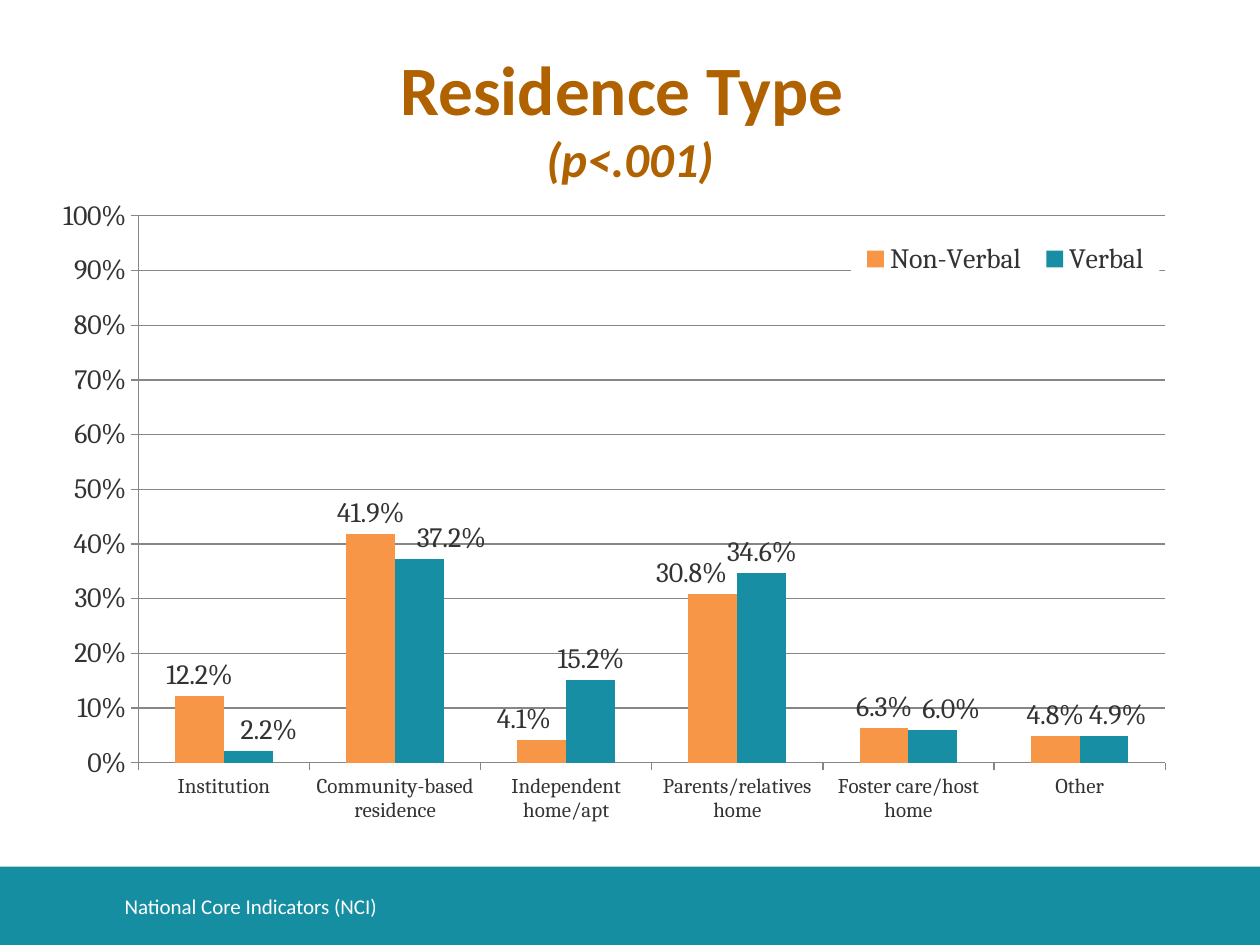
from lxml import etree
from pptx import Presentation
from pptx.chart.data import CategoryChartData
from pptx.dml.color import RGBColor
from pptx.enum.chart import XL_CHART_TYPE as ChartType, XL_LABEL_POSITION as LabelPos
from pptx.enum.chart import XL_LEGEND_POSITION as LegendPos, XL_TICK_MARK as Tick
from pptx.enum.shapes import MSO_SHAPE as Shape
from pptx.enum.text import MSO_ANCHOR as Anchor, MSO_AUTO_SIZE as AutoSize, PP_ALIGN as Align
from pptx.oxml import parse_xml
from pptx.oxml.ns import nsdecls, qn
from pptx.util import Inches, Pt

TEAL = RGBColor(0x16, 0x8E, 0xA2)
BAR_TEAL = RGBColor(0x17, 0x8E, 0xA3)
ORANGE = RGBColor(0xF7, 0x96, 0x46)
BROWN = RGBColor(0xB0, 0x61, 0x00)
INK = RGBColor(0x33, 0x33, 0x33)
GRID = RGBColor(0x86, 0x86, 0x86)
WHITE = RGBColor(0xFF, 0xFF, 0xFF)

WIDTH, HEIGHT = Inches(10), Inches(7.5)
MARGIN = 0.05

RESIDENCES = ["Institution", "Community-based residence", "Independent home/apt",
              "Parents/relatives home", "Foster care/host home", "Other"]
GROUPS = [
    ("Non-Verbal", [0.122, 0.419, 0.041, 0.308, 0.063, 0.048], ORANGE,
     {2: -0.016, 3: -0.019}),
    ("Verbal", [0.022, 0.372, 0.152, 0.346, 0.06, 0.049], BAR_TEAL,
     {0: 0.018, 1: 0.028, 4: 0.016, 5: 0.012}),
]


def share(left, top, width, height):
    return (int(WIDTH * left), int(HEIGHT * top), int(WIDTH * width), int(HEIGHT * height))


def format_font(font, size, color, name, bold=None, italic=None):
    font.size = Pt(size)
    font.color.rgb = color
    font.name = name
    font.bold = bold
    font.italic = italic


def add_text(paragraph, text, **style):
    run = paragraph.add_run()
    run.text = text
    format_font(run.font, **style)


def manual_layout(**settings):
    layout = parse_xml(f"<c:layout {nsdecls('c')}><c:manualLayout/></c:layout>")
    for key, value in settings.items():
        etree.SubElement(layout[0], qn(f"c:{key}")).set("val", str(value))
    return layout


def place_title(slide, box):
    title = slide.shapes.title
    title.left, title.top, title.width, title.height = box
    frame = title.text_frame
    frame.auto_size = AutoSize.NONE
    frame.vertical_anchor = Anchor.MIDDLE
    heading = frame.paragraphs[0]
    heading.alignment = Align.CENTER
    style = dict(color=BROWN, name="Calibri", bold=True)
    add_text(heading, "Residence Type ", size=39.6, **style)
    heading.add_line_break()
    add_text(heading, "(p<.001)", size=27.9, italic=True, **style)


def place_footer(slide, box):
    left, top, width, height = box
    band = slide.shapes.add_shape(Shape.RECTANGLE, *box)
    band.shadow.inherit = False
    band.fill.solid()
    band.fill.fore_color.rgb = TEAL
    band.line.fill.background()
    caption = slide.shapes.add_textbox(left + int(width * 0.089), top + int(height * 0.18),
                                       int(width * 0.74), int(height * 0.65))
    frame = caption.text_frame
    frame.word_wrap = True
    frame.vertical_anchor = Anchor.MIDDLE
    add_text(frame.paragraphs[0], "National Core Indicators (NCI)",
             size=12, color=WHITE, name="Calibri")


def format_axis(axis, size):
    axis.major_tick_mark = Tick.OUTSIDE
    axis.minor_tick_mark = Tick.NONE
    format_font(axis.tick_labels.font, size, INK, "Cambria")
    axis.format.line.color.rgb = GRID
    axis.format.line.width = Pt(0.75)


def format_series(series, color, shifts):
    series.format.fill.solid()
    series.format.fill.fore_color.rgb = color
    series.invert_if_negative = False
    labels = series.data_labels
    labels.show_value = True
    labels.number_format = "0.0%"
    labels.number_format_is_linked = False
    labels.position = LabelPos.OUTSIDE_END
    format_font(labels.font, 16, INK, "Cambria")
    for index, shift in shifts.items():
        label = series.points[index].data_label
        format_font(label.font, 16, INK, "Cambria")
        label.position = LabelPos.OUTSIDE_END
    for point_label in labels._element.findall(qn("c:dLbl")):
        index = point_label.find(qn("c:idx"))
        index.addnext(manual_layout(x=shifts[int(index.get("val"))], y=0))


def format_legend(chart):
    chart.has_legend = True
    legend = chart.legend
    legend.position = LegendPos.RIGHT
    legend.include_in_layout = True
    format_font(legend.font, 16, INK, "Cambria")
    element = legend._element
    for old in element.findall(qn("c:layout")):
        element.remove(old)
    element.find(qn("c:legendPos")).addnext(
        manual_layout(xMode="edge", yMode="edge", x=0.695, y=0.07, w=0.272, h=0.06))
    element.find(qn("c:overlay")).addnext(parse_xml(
        f"<c:spPr {nsdecls('c', 'a')}><a:solidFill><a:srgbClr val='{WHITE}'/></a:solidFill></c:spPr>"))


def place_chart(slide, box):
    data = CategoryChartData(number_format="0.0%")
    data.categories = RESIDENCES
    for name, values, _, _ in GROUPS:
        data.add_series(name, values)
    chart = slide.shapes.add_chart(ChartType.COLUMN_CLUSTERED, *box, data).chart
    chart.has_title = False
    format_font(chart.font, 10, INK, "Cambria")

    format_axis(chart.category_axis, 12)
    values_axis = chart.value_axis
    format_axis(values_axis, 16)
    values_axis.minimum_scale, values_axis.maximum_scale = 0, 1
    values_axis.major_unit = 0.1
    values_axis.tick_labels.number_format = "0%"
    values_axis.tick_labels.number_format_is_linked = False
    gridlines = values_axis.major_gridlines.format.line
    gridlines.color.rgb = GRID
    gridlines.width = Pt(0.75)

    plot = chart.plots[0]
    plot.gap_width, plot.overlap = 150, 0
    plot.vary_by_categories = False
    for series, (_, _, color, shifts) in zip(plot.series, GROUPS):
        format_series(series, color, shifts)
    format_legend(chart)

    area = chart._chartSpace.find(".//" + qn("c:plotArea"))
    for old in area.findall(qn("c:layout")):
        area.remove(old)
    area.insert(0, manual_layout(layoutTarget="inner", xMode="edge", yMode="edge",
                                 x=0.066, y=0.032, w=0.906, h=0.864))


def main():
    deck = Presentation()
    deck.slide_width, deck.slide_height = WIDTH, HEIGHT
    slide = deck.slides.add_slide(deck.slide_layouts[5])
    content = 1 - 2 * MARGIN
    place_footer(slide, share(0, 0.917, 1, 0.083))
    place_title(slide, share(MARGIN, 0.04, content, 0.167))
    place_chart(slide, share(MARGIN, 0.207, content, 0.67))
    deck.save("out.pptx")


if __name__ == "__main__":
    main()
